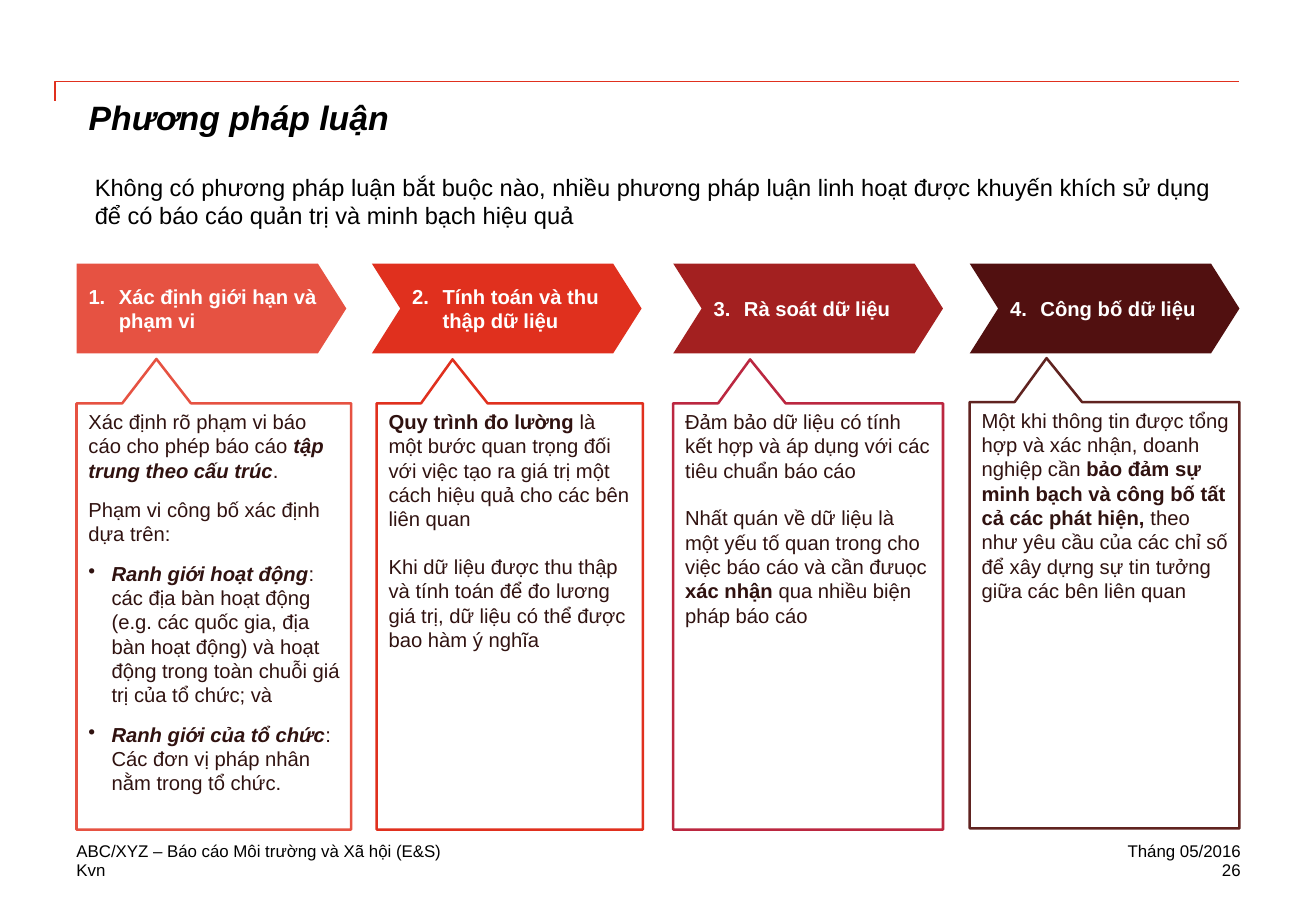
import pptx
import pptx.util
import pptx.dml.color
import pptx.enum.shapes
import pptx.enum.text
import pptx.oxml.ns
import lxml.etree

Inches = pptx.util.Inches
Pt = pptx.util.Pt
Shape = pptx.enum.shapes.MSO_SHAPE
Anchor = pptx.enum.text.MSO_ANCHOR
Align = pptx.enum.text.PP_ALIGN


def color(value):
    return pptx.dml.color.RGBColor.from_string(value)


def write(shape, paragraphs, size=12, ink="000000", style="", after=0, align=Align.LEFT,
          anchor=Anchor.TOP, insets=(0.1, 0.05, 0.1, 0.05)):
    """Fill a shape with (marker, indent, runs) paragraphs; a run is (text, style), style made of b and i."""
    frame = shape.text_frame
    frame.word_wrap = True
    frame.auto_size = pptx.enum.text.MSO_AUTO_SIZE.NONE
    frame.vertical_anchor = anchor
    frame.margin_left, frame.margin_top, frame.margin_right, frame.margin_bottom = map(Inches, insets)
    for index, (marker, indent, runs) in enumerate(paragraphs):
        para = frame.add_paragraph() if index else frame.paragraphs[0]
        para.alignment = align
        para.space_before = Pt(0)
        para.space_after = Pt(after)
        properties = para._p.get_or_add_pPr()
        properties.set("marL", str(Inches(indent)))
        properties.set("indent", str(-Inches(indent)))
        if isinstance(marker, int):
            tag, values = "a:buAutoNum", {"type": "arabicPeriod", "startAt": str(marker)}
        elif marker:
            tag, values = "a:buChar", {"char": marker}
        else:
            tag, values = "a:buNone", {}
        lxml.etree.SubElement(properties, pptx.oxml.ns.qn(tag), values)
        for text, run_style in runs:
            span = para.add_run()
            span.text = text
            span.font.name = "Arial"
            span.font.size = Pt(size)
            span.font.color.rgb = color(ink)
            span.font.bold = "b" in style + run_style
            span.font.italic = "i" in style + run_style


deck = pptx.Presentation()
deck.slide_width = Inches(10.83)
deck.slide_height = Inches(7.5)
page = deck.slides.add_slide(deck.slide_layouts[1])

# Corner rule above the title
builder = page.shapes.build_freeform(Inches(0.45), Inches(0.83))
builder.add_line_segments([(Inches(0.45), Inches(0.67)), (Inches(10.2), Inches(0.67))], close=False)
rule = builder.convert_to_shape()
rule.shadow.inherit = False
rule.fill.background()
rule.line.color.rgb = color("E0301E")
rule.line.width = Pt(1)

# Title and lead sentence
title = page.shapes.title
title.left, title.top, title.width, title.height = map(Inches, (0.63, 0.75, 9.57, 1))
write(title, [("", 0, [("Phương pháp luận", "")])], size=20, style="bi")

lead = page.placeholders[1]
lead.left, lead.top, lead.width, lead.height = map(Inches, (0.78, 1.42, 9.42, 5.33))
write(lead, [("", 0, [("Không có phương pháp luận bắt buộc nào, nhiều phương pháp luận linh hoạt "
                       "được khuyến khích sử dụng để có báo cáo quản trị và minh bạch hiệu quả", "")])],
      size=14, after=9, insets=(0, 0, 0, 0))

# Footer
footers = [
    ("ABC/XYZ – Báo cáo Môi trường và Xã hội (E&S)", 0.63, 6.92, 6.23, Align.LEFT),
    ("Kvn", 0.63, 7.08, 3.07, Align.LEFT),
    ("Tháng 05/2016", 8.4, 6.92, 1.81, Align.RIGHT),
    ("26", 8.4, 7.08, 1.81, Align.RIGHT),
]
for text, left, top, width, align in footers:
    box = page.shapes.add_textbox(Inches(left), Inches(top), Inches(width), Inches(0.17))
    write(box, [("", 0, [(text, "")])], size=10, align=align, insets=(0, 0, 0, 0))

# Four steps: heading, arrow left and fill, callout (left, top, width), pointer, line, spacing, paragraphs
steps = [
    ("Xác định giới hạn và phạm vi", 0.63, "E65242", (0.63, 3.32, 2.26), (-0.209, -0.604), "E65242", 9, [
        ("", 0, [("Xác định rõ phạm vi báo cáo cho phép báo cáo ", ""),
                 ("tập trung theo cấu trúc", "bi"), (".", "")]),
        ("", 0, [("Phạm vi công bố xác định dựa trên:", "")]),
        ("•", 0.19, [("Ranh giới hoạt động", "bi"),
                     (": các địa bàn hoạt động (e.g. các quốc gia, địa bàn hoạt động) và hoạt động "
                      "trong toàn chuỗi giá trị của tổ chức; và", "")]),
        ("•", 0.19, [("Ranh giới của tổ chức", "bi"),
                     (": Các đơn vị pháp nhân nằm trong tổ chức.", "")]),
    ]),
    ("Tính toán và thu thập dữ liệu", 3.06, "E0301E", (3.1, 3.32, 2.19), (-0.215, -0.603), "E0301E", 14, [
        ("", 0, [("Quy trình đo lường ", "b"),
                 ("là một bước quan trọng đối với việc tạo ra giá trị một cách hiệu quả "
                  "cho các bên liên quan", "")]),
        ("", 0, [("Khi dữ liệu được thu thập và tính toán để đo lương giá trị, "
                  "dữ liệu có thể được bao hàm ý nghĩa", "")]),
    ]),
    ("Rà soát dữ liệu", 5.54, "A32020", (5.54, 3.32, 2.22), (-0.215, -0.603), "BB2740", 14, [
        ("", 0, [("Đảm bảo dữ liệu có tính kết hợp và áp dụng với các tiêu chuẩn báo cáo", "")]),
        ("", 0, [("Nhất quán về dữ liệu là một yếu tố quan trong cho việc báo cáo và cần đưuọc ", ""),
                 ("xác nhận ", "b"), ("qua nhiều biện pháp báo cáo", "")]),
    ]),
    ("Công bố dữ liệu", 7.98, "511010", (7.98, 3.31, 2.22), (-0.215, -0.603), "602320", 14, [
        ("", 0, [("Một khi thông tin được tổng hợp và xác nhận, doanh nghiệp cần ", ""),
                 ("bảo đảm sự minh bạch và công bố tất cả các phát hiện, ", "b"),
                 ("theo như yêu cầu của các chỉ số để xây dựng sự tin tưởng giữa các bên liên quan", "")]),
    ]),
]
for number, (heading, arrow_left, fill, place, pointer, outline, after, paragraphs) in enumerate(steps, 1):
    left, top, width = place
    callout = page.shapes.add_shape(Shape.RECTANGULAR_CALLOUT, Inches(left), Inches(top),
                                    Inches(width), Inches(3.51))
    callout.adjustments[0], callout.adjustments[1] = pointer
    callout.shadow.inherit = False
    callout.fill.solid()
    callout.fill.fore_color.rgb = color("FFFFFF")
    callout.line.color.rgb = color(outline)
    callout.line.width = Pt(1.5)
    write(callout, paragraphs, ink="301210", after=after, insets=(0.1, 0.05, 0.08, 0.05))

    arrow = page.shapes.add_shape(Shape.PENTAGON if number == 1 else Shape.CHEVRON, Inches(arrow_left),
                                  Inches(2.17), Inches(2.22), Inches(0.74))
    arrow.adjustments[0] = 0.316
    arrow.shadow.inherit = False
    arrow.fill.solid()
    arrow.fill.fore_color.rgb = color(fill)
    arrow.line.fill.background()
    write(arrow, [(number, 0.25, [(heading, "")])], ink="FFFFFF", style="b", anchor=Anchor.MIDDLE)

deck.save("out.pptx")
